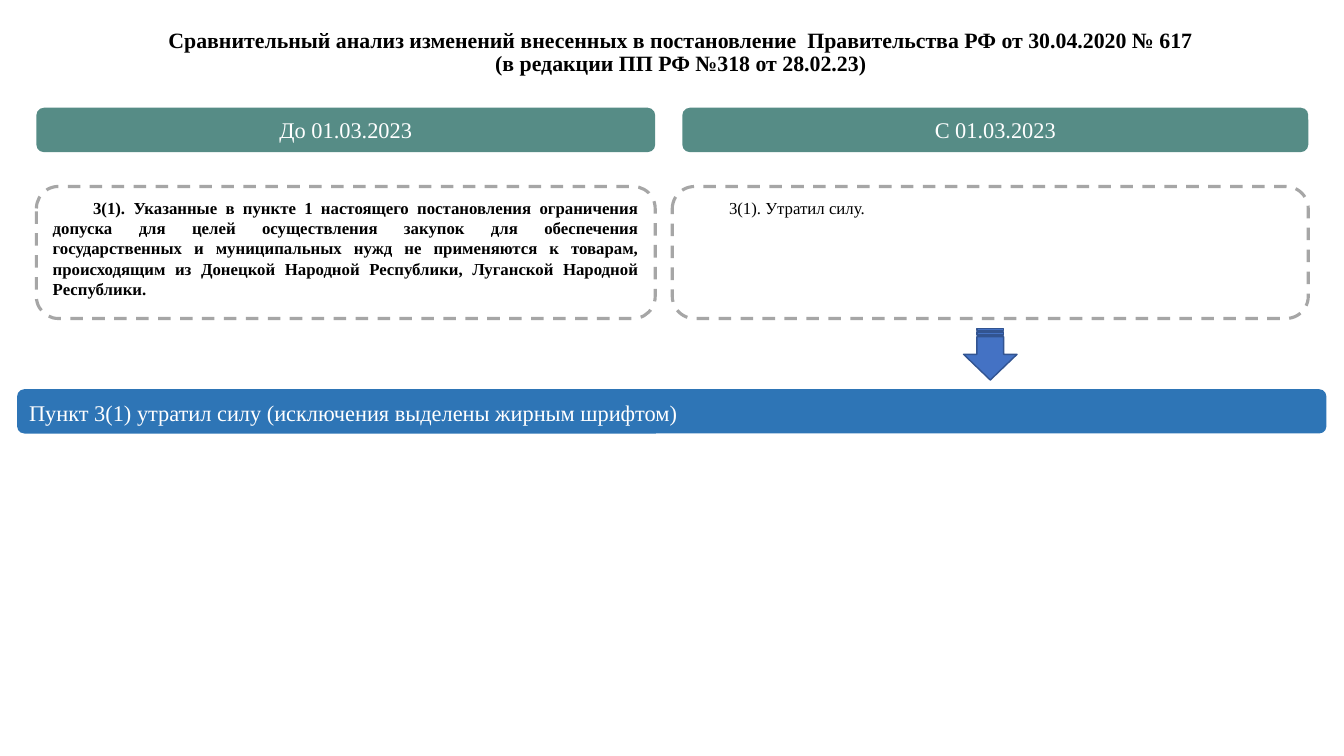
"""Build a slide comparing a decree's clause before and after 01.03.2023."""
from dataclasses import dataclass
from typing import Optional

from pptx import Presentation
from pptx.dml.color import RGBColor
from pptx.enum import dml, shapes, text
from pptx import util as u

FONT = "Times New Roman"
BLACK = RGBColor(0x00, 0x00, 0x00)
WHITE = RGBColor(0xFF, 0xFF, 0xFF)
GREY = RGBColor(0xA6, 0xA6, 0xA6)
TEAL = RGBColor(0x56, 0x8C, 0x86)
BLUE = RGBColor(0x2E, 0x75, 0xB6)
ARROW_FILL = RGBColor(0x44, 0x72, 0xC4)
ARROW_LINE = RGBColor(0x32, 0x54, 0x91)

HEADER_TOP, BAR_HEIGHT = 77, 31.7
CLAUSE_TOP, CLAUSE_HEIGHT = 133.2, 94.3
FIRST_LINE_INDENT = 28.8

TITLE = (
    "Сравнительный анализ изменений внесенных в постановление  "
    "Правительства РФ от 30.04.2020 № 617\n"
    "(в редакции ПП РФ №318 от 28.02.23)"
)
OLD_CLAUSE = (
    "3(1). Указанные в пункте 1 настоящего постановления ограничения допуска "
    "для целей осуществления закупок для обеспечения государственных и "
    "муниципальных нужд не применяются к товарам, происходящим из Донецкой "
    "Народной Республики, Луганской Народной Республики."
)
SUMMARY = "Пункт 3(1) утратил силу (исключения выделены жирным шрифтом)"


@dataclass(frozen=True)
class Bar:
    """A filled rounded strip with white text."""
    text: str
    left: float
    top: float
    width: float
    fill: RGBColor
    align: text.PP_ALIGN = text.PP_ALIGN.CENTER
    spacing: Optional[float] = None


@dataclass(frozen=True)
class Clause:
    """A dashed rounded frame with the wording of a clause."""
    text: str
    left: float
    width: float
    bold: bool = False
    corner: float = 0.1667


BARS = [
    Bar("До 01.03.2023", 26, HEADER_TOP, 442, TEAL),
    Bar("С 01.03.2023", 487.4, HEADER_TOP, 447.1, TEAL),
    Bar(SUMMARY, 12.2, 278, 935.3, BLUE, text.PP_ALIGN.JUSTIFY, 1.07),
]
CLAUSES = [
    Clause(OLD_CLAUSE, 26, 442, bold=True),
    Clause("3(1). Утратил силу.", 480.2, 454.3, corner=0.169),
]


def write(sp, content: str, size: float, color: RGBColor, align: text.PP_ALIGN,
          anchor: text.MSO_ANCHOR, bold: bool = False,
          spacing: Optional[float] = None) -> None:
    """Set the text of a shape and format all its paragraphs."""
    tf = sp.text_frame
    tf.text = content
    tf.word_wrap = True
    tf.auto_size = text.MSO_AUTO_SIZE.NONE
    tf.vertical_anchor = anchor
    for p in tf.paragraphs:
        p.alignment = align
        p.space_before = u.Pt(0)
        if spacing is not None:
            p.line_spacing = spacing
        for r in p.runs:
            r.font.name = FONT
            r.font.size = u.Pt(size)
            r.font.bold = bold
            r.font.color.rgb = color


def add_shape(s, kind: shapes.MSO_SHAPE, left: float, top: float,
              width: float, height: float, fill: Optional[RGBColor] = None):
    """Add a preset shape without shadow, filled or hollow."""
    sp = s.shapes.add_shape(kind, u.Pt(left), u.Pt(top), u.Pt(width), u.Pt(height))
    sp.shadow.inherit = False
    if fill is None:
        sp.fill.background()
    else:
        sp.fill.solid()
        sp.fill.fore_color.rgb = fill
    return sp


def add_title(s) -> None:
    """Place and fill the title placeholder."""
    sp = s.shapes.title
    sp.left, sp.top = u.Pt(30.2), u.Pt(-2.9)
    sp.width, sp.height = u.Pt(912.2), u.Pt(78.5)
    write(sp, TITLE, 15.6, BLACK, text.PP_ALIGN.CENTER,
          text.MSO_ANCHOR.BOTTOM, bold=True, spacing=0.9)
    sp.text_frame.margin_bottom = u.Pt(21)


def add_bar(s, bar: Bar) -> None:
    """Draw one filled strip."""
    sp = add_shape(s, shapes.MSO_SHAPE.ROUNDED_RECTANGLE, bar.left, bar.top,
                   bar.width, BAR_HEIGHT, bar.fill)
    sp.line.fill.background()
    write(sp, bar.text, 16, WHITE, bar.align, text.MSO_ANCHOR.MIDDLE,
          spacing=bar.spacing)


def add_clause(s, clause: Clause) -> None:
    """Draw one dashed frame with an indented first line."""
    sp = add_shape(s, shapes.MSO_SHAPE.ROUNDED_RECTANGLE, clause.left,
                   CLAUSE_TOP, clause.width, CLAUSE_HEIGHT)
    sp.adjustments[0] = clause.corner
    sp.line.color.rgb = GREY
    sp.line.width = u.Pt(2.25)
    sp.line.dash_style = dml.MSO_LINE.DASH
    write(sp, clause.text, 12, BLACK, text.PP_ALIGN.JUSTIFY,
          text.MSO_ANCHOR.TOP, bold=clause.bold)
    p = sp.text_frame.paragraphs[0]
    p._p.get_or_add_pPr().set("indent", str(u.Pt(FIRST_LINE_INDENT)))


def add_arrow(s) -> None:
    """Draw the striped arrow pointing down to the summary."""
    sp = add_shape(s, shapes.MSO_SHAPE.STRIPED_RIGHT_ARROW,
                   689, 234, 36.7, 38.2, ARROW_FILL)
    sp.rotation = 90
    sp.line.color.rgb = ARROW_LINE
    sp.line.width = u.Pt(1)


def main() -> None:
    """Assemble and save the presentation."""
    prs = Presentation()
    prs.slide_width, prs.slide_height = u.Pt(960), u.Pt(540)
    s = prs.slides.add_slide(prs.slide_layouts[5])
    add_title(s)
    for clause in CLAUSES:
        add_clause(s, clause)
    for bar in BARS:
        add_bar(s, bar)
    add_arrow(s)
    prs.save("out.pptx")


if __name__ == "__main__":
    main()
